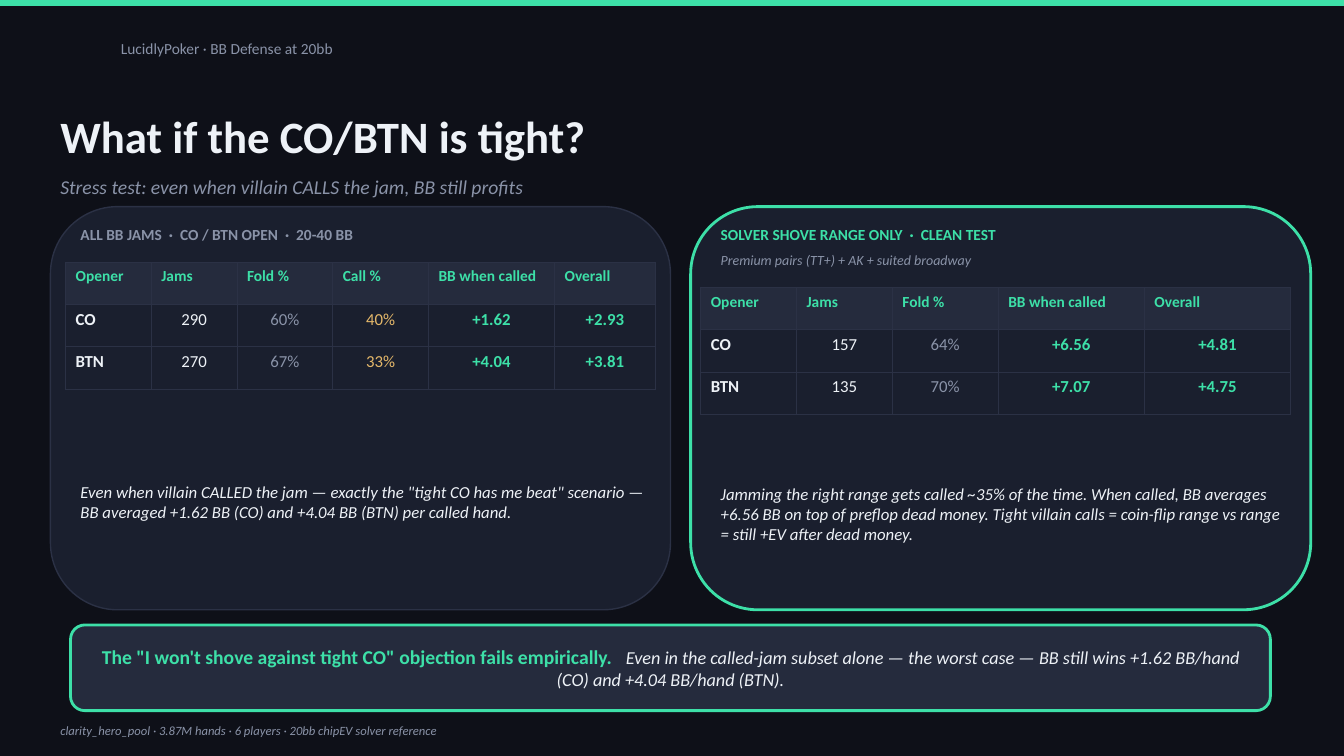
"""Build the slide on how big-blind jams fare against tight openers."""
from lxml import etree
from pptx import Presentation
from pptx.dml.color import RGBColor
from pptx.enum.shapes import MSO_SHAPE
from pptx.enum.text import MSO_ANCHOR, PP_ALIGN
from pptx.oxml.ns import qn
from pptx.util import Inches, Pt

RECT, ROUNDED = MSO_SHAPE.RECTANGLE, MSO_SHAPE.ROUNDED_RECTANGLE
MIDDLE = MSO_ANCHOR.MIDDLE
LEFT, CENTER = PP_ALIGN.LEFT, PP_ALIGN.CENTER
FONT = "Calibri"
COLORS = {
    "background": "0E1018", "panel": "1A1F2E", "raised": "252B3D",
    "border": "2B3145", "accent": "3DE0A8", "text": "EEF2F7",
    "muted": "8A93A8", "amber": "E5B86A",
}

# text, (left, top, width, height), size, colour, bold, italic
HEADINGS = [
    ("LucidlyPoker · BB Defense at 20bb", (1.1, 0.25, 8, 0.45), 11, "muted", False, False),
    ("clarity_hero_pool · 3.87M hands · 6 players · 20bb chipEV solver reference",
     (0.5, 7.05, 12.3, 0.4), 9, "muted", False, True),
    ("What if the CO/BTN is tight?", (0.5, 1, 12.3, 0.7), 32, "text", True, False),
    ("Stress test: even when villain CALLS the jam, BB still profits",
     (0.5, 1.65, 12.3, 0.4), 14, "muted", False, True),
]
PANELS = [
    {
        "left": 0.5, "outline": ("border", 1),
        "label": "ALL BB JAMS  ·  CO / BTN OPEN  ·  20-40 BB", "label_color": "muted",
        "subtitle": None,
        "table_at": (0.65, 2.6), "columns": [0.85, 0.85, 0.95, 0.95, 1.25, 1],
        "rows": [
            ("Opener", "Jams", "Fold %", "Call %", "BB when called", "Overall"),
            ("CO", "290", "60%", "40%", "+1.62", "+2.93"),
            ("BTN", "270", "67%", "33%", "+4.04", "+3.81"),
        ],
        "note": "Even when villain CALLED the jam — exactly the \"tight CO has me beat\" "
                "scenario — BB averaged +1.62 BB (CO) and +4.04 BB (BTN) per called hand.",
        "note_top": 4.05,
    },
    {
        "left": 6.85, "outline": ("accent", 2),
        "label": "SOLVER SHOVE RANGE ONLY  ·  CLEAN TEST", "label_color": "accent",
        "subtitle": "Premium pairs (TT+) + AK + suited broadway",
        "table_at": (6.95, 2.85), "columns": [0.95, 0.95, 1.05, 1.45, 1.45],
        "rows": [
            ("Opener", "Jams", "Fold %", "BB when called", "Overall"),
            ("CO", "157", "64%", "+6.56", "+4.81"),
            ("BTN", "135", "70%", "+7.07", "+4.75"),
        ],
        "note": "Jamming the right range gets called ~35% of the time. When called, BB "
                "averages +6.56 BB on top of preflop dead money. Tight villain calls = "
                "coin-flip range vs range = still +EV after dead money.",
        "note_top": 4.3,
    },
]
# column heading: colour, bold, alignment of the values below it
VALUE_STYLES = {
    "Opener": ("text", True, LEFT), "Jams": ("text", False, CENTER),
    "Fold %": ("muted", False, CENTER), "Call %": ("amber", False, CENTER),
    "BB when called": ("accent", True, CENTER), "Overall": ("accent", True, CENTER),
}
# text, size, colour, bold, italic
TAKEAWAY = [
    ("The \"I won't shove against tight CO\" objection fails empirically.   ",
     14, "accent", True, False),
    ("Even in the called-jam subset alone — the worst case — BB still wins "
     "+1.62 BB/hand (CO) and +4.04 BB/hand (BTN).", 13, "text", False, True),
]
PANEL_TOP, PANEL_WIDTH, PANEL_HEIGHT = 2.05, 6.15, 4
PANEL_INDENT, PANEL_TEXT_WIDTH, NOTE_BOTTOM = 0.2, 5.8, 5.9
ROW_HEIGHT = 0.42


def rgb(name):
    return RGBColor.from_string(COLORS[name])


def style(font, size, color, bold=False, italic=False):
    font.name, font.size = FONT, Pt(size)
    font.bold, font.italic = bold, italic
    font.color.rgb = rgb(color)


def add_box(slide, kind, place, fill, outline=None):
    box = slide.shapes.add_shape(kind, *map(Inches, place))
    box.shadow.inherit = False
    box.fill.solid()
    box.fill.fore_color.rgb = rgb(fill)
    if outline:
        box.line.color.rgb = rgb(outline[0])
        box.line.width = Pt(outline[1])
    else:
        box.line.fill.background()


def add_paragraph_box(slide, place):
    frame = slide.shapes.add_textbox(*map(Inches, place)).text_frame
    frame.word_wrap = True
    frame.vertical_anchor = MIDDLE
    return frame.paragraphs[0]


def add_text(slide, text, place, *look):
    paragraph = add_paragraph_box(slide, place)
    paragraph.text = text
    style(paragraph.font, *look)


def add_borders(cell):
    properties = cell._tc.get_or_add_tcPr()
    for side in ("lnL", "lnR", "lnT", "lnB"):
        edge = etree.SubElement(properties, qn(f"a:{side}"), w=str(Pt(0.5)))
        fill = etree.SubElement(edge, qn("a:solidFill"))
        etree.SubElement(fill, qn("a:srgbClr"), val=COLORS["border"])


def add_results(slide, panel):
    rows, widths = panel["rows"], panel["columns"]
    place = (*panel["table_at"], sum(widths), ROW_HEIGHT * len(rows))
    table = slide.shapes.add_table(len(rows), len(widths), *map(Inches, place)).table
    table.horz_banding = False
    for column, width in zip(table.columns, widths):
        column.width = Inches(width)
    for r, values in enumerate(rows):
        table.rows[r].height = Inches(ROW_HEIGHT)
        for c, value in enumerate(values):
            cell = table.cell(r, c)
            add_borders(cell)
            paragraph = cell.text_frame.paragraphs[0]
            paragraph.text = value
            if r == 0:
                cell.fill.solid()
                cell.fill.fore_color.rgb = rgb("raised")
                style(paragraph.font, 11, "accent", True)
            else:
                cell.fill.background()
                color, bold, paragraph.alignment = VALUE_STYLES[rows[0][c]]
                style(paragraph.font, 12, color, bold)


def add_panel(slide, panel):
    left = panel["left"]
    text_left = left + PANEL_INDENT
    add_box(slide, ROUNDED, (left, PANEL_TOP, PANEL_WIDTH, PANEL_HEIGHT),
            "panel", panel["outline"])
    add_text(slide, panel["label"], (text_left, 2.15, PANEL_TEXT_WIDTH, 0.35),
             11, panel["label_color"], True)
    if panel["subtitle"]:
        add_text(slide, panel["subtitle"], (text_left, 2.45, PANEL_TEXT_WIDTH, 0.25),
                 10, "muted", False, True)
    add_results(slide, panel)
    top = panel["note_top"]
    add_text(slide, panel["note"], (text_left, top, PANEL_TEXT_WIDTH, NOTE_BOTTOM - top),
             12, "text", False, True)


def add_takeaway(slide):
    add_box(slide, ROUNDED, (0.7, 6.2, 11.9, 0.85), "raised", ("accent", 2))
    paragraph = add_paragraph_box(slide, (0.9, 6.27, 11.5, 0.7))
    paragraph.alignment = CENTER
    for text, *look in TAKEAWAY:
        run = paragraph.add_run()
        run.text = text
        style(run.font, *look)


def main():
    deck = Presentation()
    deck.slide_width, deck.slide_height = Inches(13.33), Inches(7.5)
    slide = deck.slides.add_slide(deck.slide_layouts[6])
    slide.background.fill.solid()
    slide.background.fill.fore_color.rgb = rgb("background")
    add_box(slide, RECT, (0, 0, 13.33, 0.06), "accent")
    for heading in HEADINGS:
        add_text(slide, *heading)
    for panel in PANELS:
        add_panel(slide, panel)
    add_takeaway(slide)
    deck.save("out.pptx")


if __name__ == "__main__":
    main()
